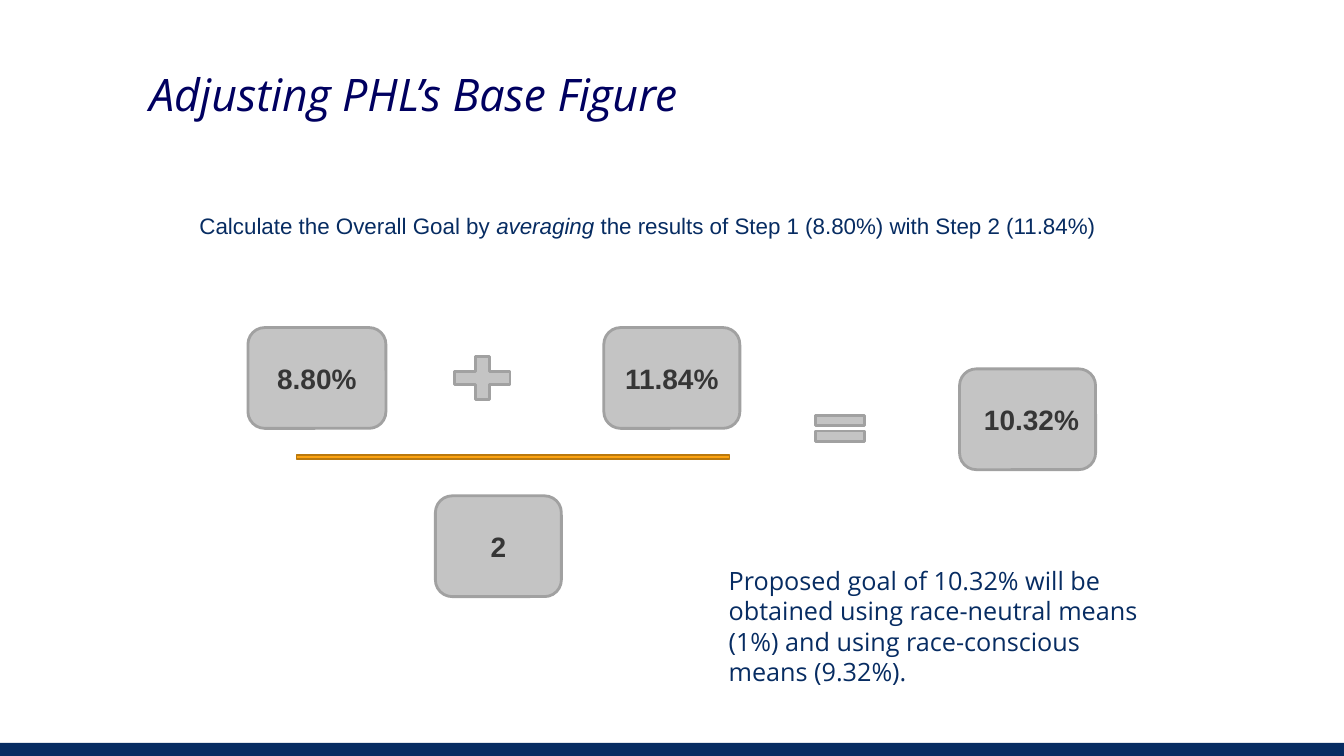
"""Build the slide that averages two steps into the overall goal."""
from dataclasses import dataclass

from pptx import Presentation
from pptx.dml.color import RGBColor
from pptx.enum.shapes import MSO_SHAPE as SHAPE
from pptx.enum.text import MSO_ANCHOR as ANCHOR, MSO_AUTO_SIZE as AUTO, PP_ALIGN as ALIGN
from pptx.util import Pt

NAVY, TITLE_BLUE = "072C62", "000060"
GREY, GREY_LINE, DARK = "C4C4C4", "A1A1A1", "363636"
ORANGE, ORANGE_LINE = "FCA311", "BA790D"
WIDTH, HEIGHT, FOOTER = 960, 540, 9.4


@dataclass
class Block:
    kind: SHAPE
    left: float
    top: float
    width: float
    height: float
    text: str = ""
    fill: str = GREY
    line: str = GREY_LINE
    weight: float = 2
    indent: float = 0


@dataclass
class Caption:
    left: float
    top: float
    width: float
    height: float
    runs: list[tuple[str, bool]]
    font: str
    size: float
    color: str = NAVY
    spacing: float = 1


BLOCKS = [
    Block(SHAPE.ROUNDED_RECTANGLE, 177.1, 234, 98.6, 72, "8.80%"),
    Block(SHAPE.MATH_PLUS, 317.5, 249.1, 54, 41.8),
    Block(SHAPE.ROUNDED_RECTANGLE, 431.3, 234, 97.2, 72, "11.84%"),
    Block(SHAPE.ROUNDED_RECTANGLE, 311, 354.2, 90, 72, "2"),
    Block(SHAPE.MATH_EQUAL, 576, 290.2, 48.2, 31.7),
    Block(SHAPE.ROUNDED_RECTANGLE, 685.4, 263.5, 97.2, 72, "10.32%", indent=5.6),
    Block(SHAPE.MATH_MINUS, 156.2, 320.4, 420.5, 12.2, "", ORANGE, ORANGE_LINE, 1),
]

TITLE = Caption(99.4, 48.2, 540.7, 45.4, [("Adjusting PHL’s Base Figure", True)],
                "Open Sans", 32, TITLE_BLUE, 0.9)
CAPTIONS = [
    Caption(135.4, 152, 792, 24,
            [("Calculate the Overall Goal by ", False), ("averaging", True),
             (" the results of Step 1 (8.80%) with Step 2 (11.84%)", False)],
            "Arial", 16, spacing=0.8),
    Caption(513.4, 400.3, 316.8, 94.3,
            [("Proposed goal of 10.32% will be obtained using race-neutral means "
              "(1%) and using race-conscious means (9.32%).", False)],
            "Open Sans", 18),
]


def rgb(color: str) -> RGBColor:
    return RGBColor.from_string(color)


def draw_block(slide, block: Block) -> None:
    sp = slide.shapes.add_shape(block.kind, Pt(block.left), Pt(block.top),
                                Pt(block.width), Pt(block.height))
    sp.shadow.inherit = False
    sp.fill.solid()
    sp.fill.fore_color.rgb = rgb(block.fill)
    if block.weight:
        sp.line.color.rgb = rgb(block.line)
        sp.line.width = Pt(block.weight)
    else:
        sp.line.fill.background()
    if block.text:
        tf = sp.text_frame
        tf.vertical_anchor = ANCHOR.MIDDLE
        tf.margin_left = Pt(7.2 + block.indent)
        p = tf.paragraphs[0]
        p.text = block.text
        p.alignment = ALIGN.CENTER
        p.font.name, p.font.size, p.font.bold = "Arial", Pt(20), True
        p.font.color.rgb = rgb(DARK)


def write_caption(sp, caption: Caption) -> None:
    sp.left, sp.top = Pt(caption.left), Pt(caption.top)
    sp.width, sp.height = Pt(caption.width), Pt(caption.height)
    tf = sp.text_frame
    tf.word_wrap, tf.auto_size, tf.vertical_anchor = True, AUTO.NONE, ANCHOR.TOP
    p = tf.paragraphs[0]
    p.alignment, p.line_spacing, p.space_before = ALIGN.LEFT, caption.spacing, Pt(0)
    p.font.name, p.font.size = caption.font, Pt(caption.size)
    p.font.color.rgb = rgb(caption.color)
    for text, italic in caption.runs:
        r = p.add_run()
        r.text = text
        r.font.italic = italic


def main() -> None:
    prs = Presentation()
    prs.slide_width, prs.slide_height = Pt(WIDTH), Pt(HEIGHT)
    s = prs.slides.add_slide(prs.slide_layouts[5])
    draw_block(s, Block(SHAPE.RECTANGLE, 0, HEIGHT - FOOTER, WIDTH, FOOTER,
                        fill=NAVY, weight=0))
    write_caption(s.shapes.title, TITLE)
    for block in BLOCKS:
        draw_block(s, block)
    for caption in CAPTIONS:
        write_caption(s.shapes.add_textbox(0, 0, 0, 0), caption)
    prs.save("out.pptx")


if __name__ == "__main__":
    main()
